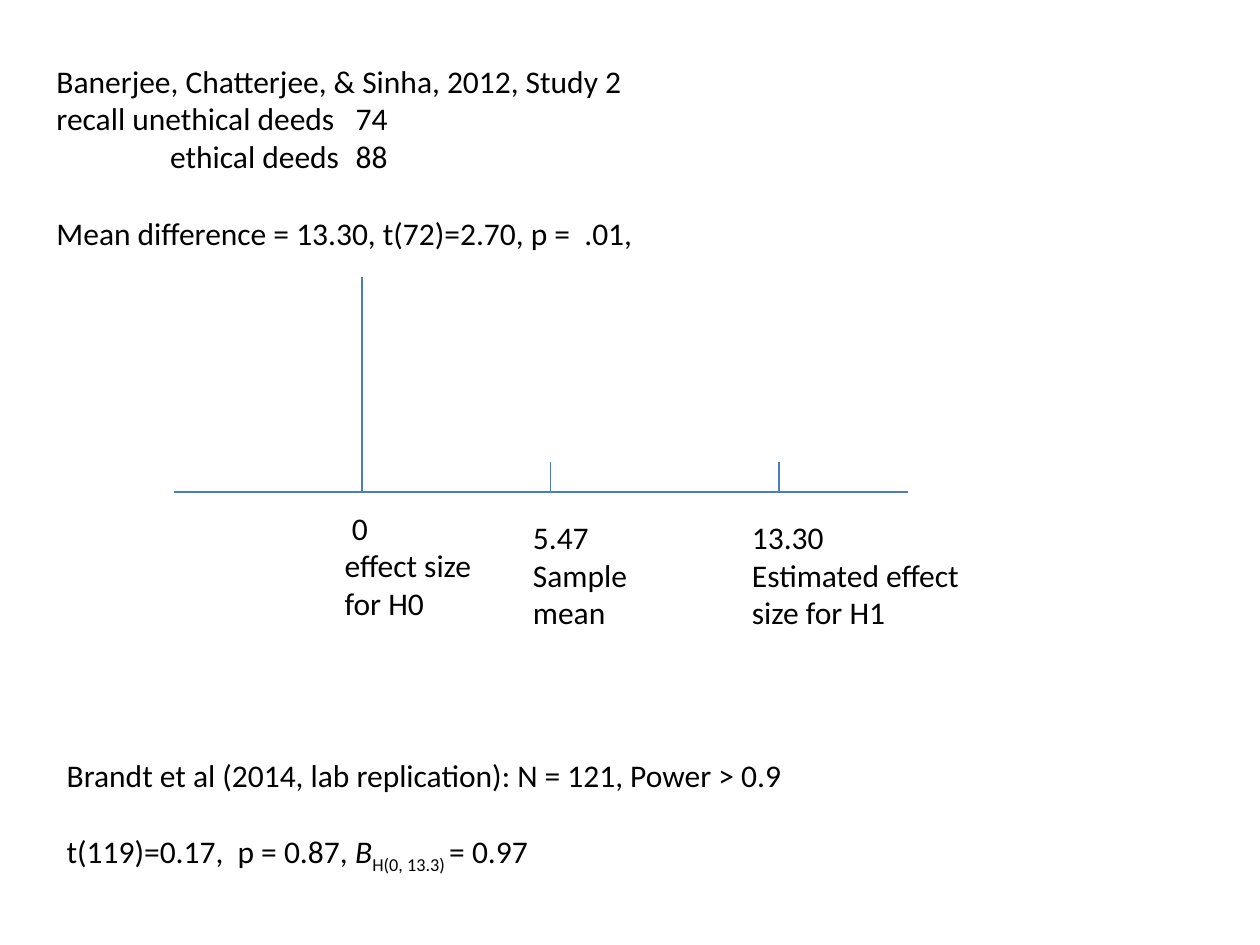
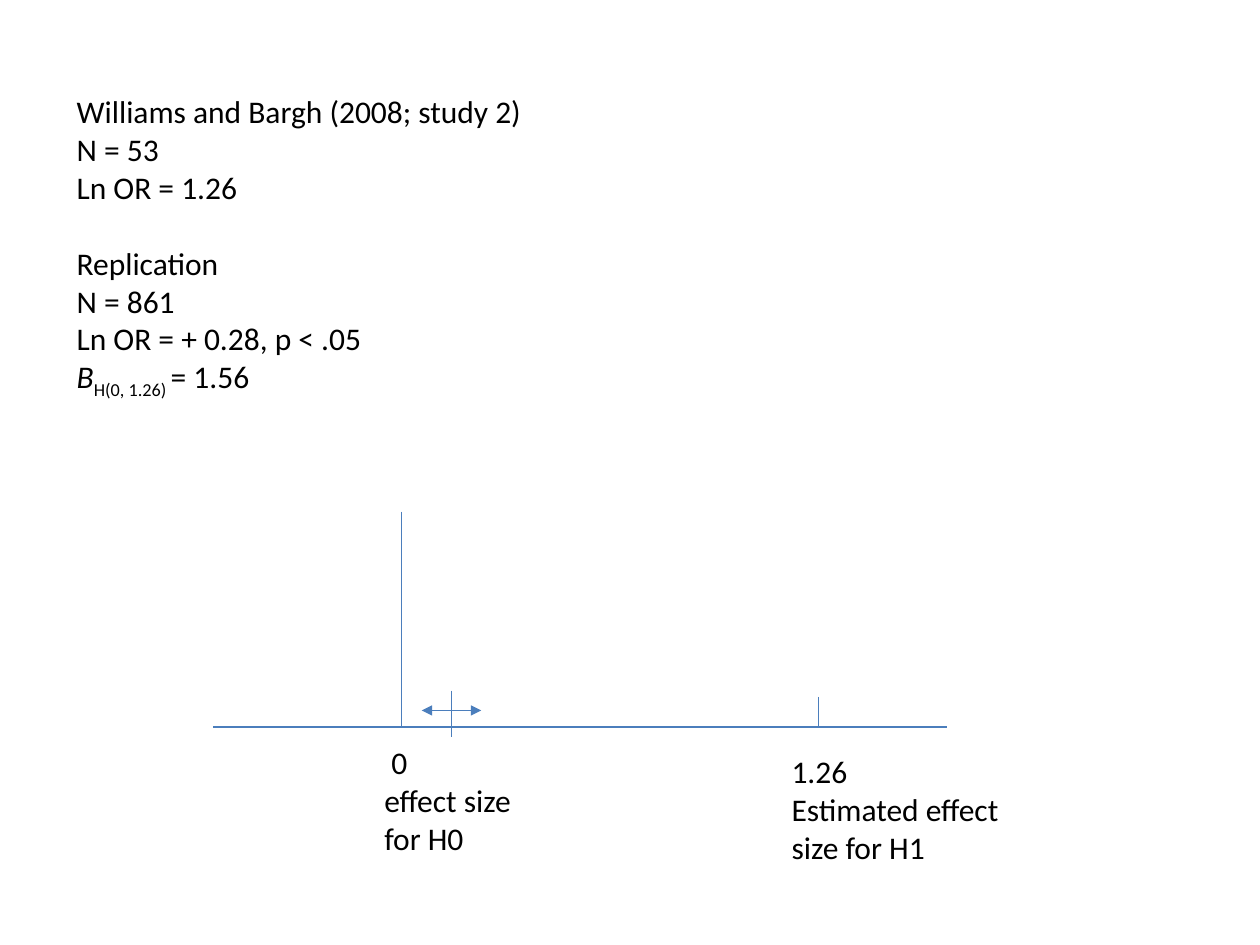
from lxml.etree import SubElement
from pptx import Presentation
from pptx.dml.color import RGBColor
from pptx.enum.shapes import MSO_CONNECTOR as Link
from pptx.oxml.ns import qn
from pptx.util import Pt

COLORS = {"text": "000000", "line": "4B7EBC"}
FONT, SIZE = "Calibri", 18
GAP = 22        # one line of text, left open above a paragraph
TABS = (65, 171)


class Deck:
    """Holds the style and the current slide."""

    def __init__(self):
        self.prs = Presentation()
        self.prs.slide_width, self.prs.slide_height = Pt(720), Pt(540)
        self.slide = None

    def page(self):
        self.slide = self.prs.slides.add_slide(self.prs.slide_layouts[6])

    def text(self, x, y, w, h, *lines, gaps=()):
        """Add a line per paragraph; gaps lists those with space above."""
        box = self.slide.shapes.add_textbox(Pt(x), Pt(y), Pt(w), Pt(h))
        frame = box.text_frame
        frame.word_wrap = True
        for i, line in enumerate(lines):
            para = frame.paragraphs[0] if i == 0 else frame.add_paragraph()
            para.font.name, para.font.size = FONT, Pt(SIZE)
            para.font.color.rgb = RGBColor.from_string(COLORS["text"])
            para.space_before = Pt(GAP if i in gaps else 0)
            if "\t" in line:
                self.tabs(para)
            self.runs(para, line)

    def runs(self, para, line):
        """Fill a paragraph from a string or from (text, style) pairs."""
        parts = [(line, "")] if isinstance(line, str) else line
        for words, style in parts:
            run = para.add_run()
            run.text = words
            if style == "italic":
                run.font.italic = True
            elif style == "sub":
                run._r.get_or_add_rPr().set("baseline", "-25000")

    def tabs(self, para):
        props = para._p.get_or_add_pPr()
        stops = props.makeelement(qn("a:tabLst"), {})
        for pos in TABS:
            SubElement(stops, qn("a:tab"), pos=str(Pt(pos)), algn="l")
        # Tab stops must stand before the default run style
        style = props.find(qn("a:defRPr"))
        if style is None:
            props.append(stops)
        else:
            style.addprevious(stops)

    def line(self, x1, y1, x2, y2, width=0.75, arrow=False):
        link = self.slide.shapes.add_connector(
            Link.STRAIGHT, Pt(x1), Pt(y1), Pt(x2), Pt(y2))
        link.line.color.rgb = RGBColor.from_string(COLORS["line"])
        link.line.width = Pt(width)
        if arrow:
            SubElement(link.line._get_or_add_ln(), qn("a:tailEnd"),
                       type="triangle")
        SubElement(link._element.spPr, qn("a:effectLst"))

    def tick(self, x, y):
        self.line(x, y - 17.2, x, y)

    def axis(self, x, y, effect):
        """Draw the effect size axis from its left end at x, y."""
        zero, est = x + 107.6, x + 346
        self.line(x, y, x + 419.4, y, width=1.25)
        self.line(zero, y - 123, zero, y)
        self.tick(est, y)
        self.text(zero - 16.9, y + 5.8, 90.7, 73, " 0", "effect size for H0")
        self.text(est - 22.6, y + 11, 135.4, 73,
                  effect, "Estimated effect size for H1")


def factor(scale, value, lead=""):
    """Bayes factor with its model as subscript."""
    return [(lead, "")] * bool(lead) + [
        ("B", "italic"), (f"H(0, {scale}) ", "sub"), (f"= {value}", "")]


def recall(deck):
    deck.page()
    # First study
    deck.text(25.2, 31.7, 556, 160,
              "Banerjee, Chatterjee, & Sinha, 2012, Study 2",
              "recall unethical deeds\t74",
              "\tethical deeds\t88",
              "Mean difference = 13.30, t(72)=2.70, p =  .01,", gaps=(3,))
    # Axis with the sample mean
    base = 281.3
    deck.axis(99.2, base, "13.30")
    deck.tick(314.6, base)
    deck.text(297.4, base + 11, 73.4, 73, "5.47 Sample mean")
    # Replication
    deck.text(31, 428.4, 550, 110,
              "Brandt et al (2014, lab replication): N = 121, Power > 0.9",
              factor("13.3", "0.97", "t(119)=0.17,  p = 0.87, "), gaps=(1,))


def warmth(deck):
    deck.page()
    # Study and replication
    deck.text(36.7, 49, 572, 181,
              "Williams and Bargh (2008; study 2)", "N = 53", "Ln OR = 1.26",
              "Replication", "N = 861", "Ln OR = + 0.28, p < .05",
              factor("1.26", "1.56"), gaps=(3,))
    # Axis with the replicated effect and its spread
    deck.axis(121.8, 415.4, "1.26")
    mean, level = 258, 406
    deck.line(mean, 394.6, mean, 421.2)
    for side in (-1, 1):
        deck.line(mean, level, mean + side * 17, level, arrow=True)


def main():
    deck = Deck()
    recall(deck)
    warmth(deck)
    deck.prs.save("out.pptx")


if __name__ == "__main__":
    main()
